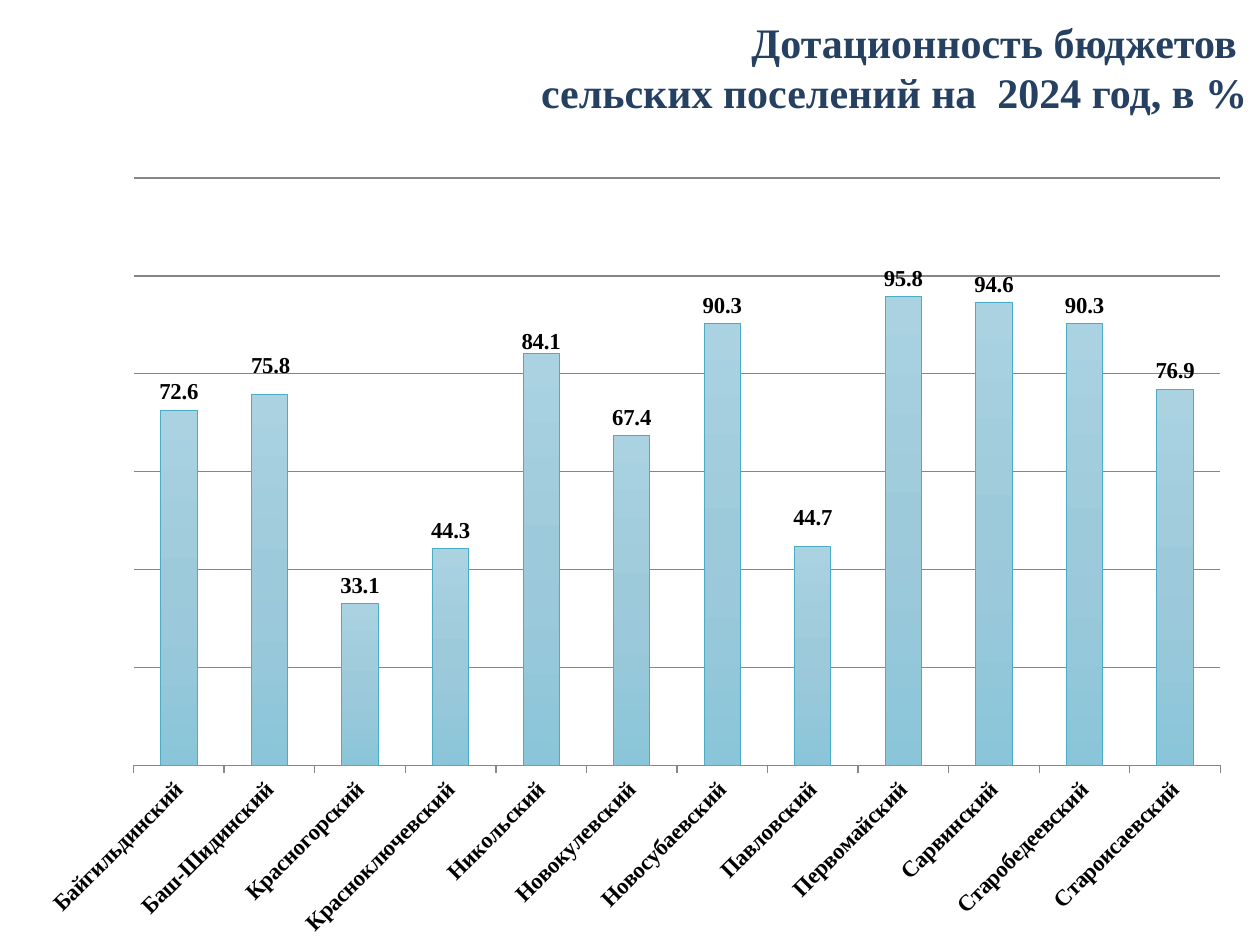
from copy import deepcopy
from dataclasses import dataclass

from pptx import Presentation
from pptx.chart.data import CategoryChartData
from pptx.dml.color import RGBColor
from pptx.enum.chart import XL_CHART_TYPE, XL_LABEL_POSITION, XL_TICK_MARK
from pptx.enum.text import MSO_ANCHOR, MSO_AUTO_SIZE, PP_ALIGN
from pptx.oxml import parse_xml
from pptx.oxml.ns import nsdecls
from pptx.util import Cm, Pt


@dataclass(frozen=True)
class Theme:
    """Colours, font and type sizes of the slide."""
    font: str = "Times New Roman"
    title: str = "254061"
    text: str = "000000"
    outline: str = "4BACC6"
    grid: str = "868686"
    bar: tuple = ((0, "AAD2E1"), (0.5, "9DCADB"), (1, "8BC5D9"))
    title_size: int = 24
    label_size: int = 13


THEME = Theme()
TITLE = ("Дотационность бюджетов ", "сельских поселений на  2024 год, в %")
SUBSIDY = {
    "Байгильдинский": 72.6, "Баш-Шидинский": 75.8, "Красногорский": 33.1,
    "Красноключевский": 44.3, "Никольский": 84.1, "Новокулевский": 67.4,
    "Новосубаевский": 90.3, "Павловский": 44.7, "Первомайский": 95.8,
    "Сарвинский": 94.6, "Старобедеевский": 90.3, "Староисаевский": 76.9,
}
LABEL_SHIFTS = {1: (0.001, -0.014), 4: (0, 0.008), 7: (0, -0.014)}
PLOT_BOX = {"x": 0.088, "y": 0.024, "w": 0.908, "h": 0.747}


def set_font(font, size, color):
    """Apply the bold theme font in one size and colour."""
    font.name, font.size, font.bold = THEME.font, Pt(size), True
    font.color.rgb = RGBColor.from_string(color)


def make_layout(values, modes=""):
    """Return a manual chart layout element."""
    items = "".join(f'<c:{k} val="{v}"/>' for k, v in values.items())
    return parse_xml(f'<c:layout {nsdecls("c")}><c:manualLayout>{modes}{items}'
                     '</c:manualLayout></c:layout>')


def add_title(s):
    """Place the right-aligned title in its placeholder."""
    sp = s.shapes.title
    sp.left, sp.top, sp.width, sp.height = Cm(1.4), Cm(0.2), Cm(24), Cm(2.31)
    tf = sp.text_frame
    tf.text = "\n".join(TITLE)
    tf.word_wrap, tf.vertical_anchor = True, MSO_ANCHOR.TOP
    tf.auto_size = MSO_AUTO_SIZE.SHAPE_TO_FIT_TEXT
    for p in tf.paragraphs:
        p.alignment = PP_ALIGN.RIGHT
        set_font(p.font, THEME.title_size, THEME.title)


def format_axes(chart):
    """Slant the category names and keep only gridlines of the value axis."""
    cat, val = chart.category_axis, chart.value_axis
    set_font(cat.tick_labels.font, THEME.label_size, THEME.text)
    cat._element.xpath("c:txPr/a:bodyPr")[0].set("rot", "-2700000")
    cat.major_tick_mark = XL_TICK_MARK.OUTSIDE
    val.minimum_scale, val.maximum_scale, val.major_unit = 0, 120, 20
    val.has_major_gridlines, val.visible = True, False
    val.tick_labels.number_format = "0.0"
    val.tick_labels.number_format_is_linked = False
    for line in (cat.format.line, val.major_gridlines.format.line):
        line.color.rgb = RGBColor.from_string(THEME.grid)
        line.width = Pt(0.75)


def format_bars(series):
    """Give the bars their vertical gradient and thin outline."""
    series.invert_if_negative = False
    fill, line = series.format.fill, series.format.line
    fill.gradient()
    fill.gradient_angle = 270
    stops = series._element.xpath(".//a:gsLst")[0]
    stops.insert(1, deepcopy(stops[0]))
    for stop, (position, color) in zip(fill.gradient_stops, THEME.bar):
        stop.position = position
        stop.color.rgb = RGBColor.from_string(color)
    line.color.rgb = RGBColor.from_string(THEME.outline)
    line.width = Pt(0.5)


def format_labels(series):
    """Show values above the bars, with a few labels shifted."""
    labels = series.data_labels
    labels.show_value = True
    labels.number_format, labels.number_format_is_linked = "General", False
    labels.position = XL_LABEL_POSITION.OUTSIDE_END
    set_font(labels.font, THEME.label_size, THEME.text)
    for i, (x, y) in LABEL_SHIFTS.items():
        label = series.points[i].data_label
        label.position = XL_LABEL_POSITION.OUTSIDE_END
        set_font(label.font, THEME.label_size, THEME.text)
        element = series._element.xpath(f"c:dLbls/c:dLbl[c:idx/@val={i}]")[0]
        element.insert(1, make_layout({"x": x, "y": y}))
    for leader in series._element.xpath("c:dLbls/c:showLeaderLines"):
        leader.set("val", "0")


def add_subsidy_chart(s):
    """Add the column chart of subsidy shares by settlement."""
    data = CategoryChartData(number_format="General")
    data.categories = list(SUBSIDY)
    data.add_series("Series 1", list(SUBSIDY.values()))
    chart = s.shapes.add_chart(XL_CHART_TYPE.COLUMN_CLUSTERED, Cm(0.57), Cm(3.21),
                               Cm(24.13), Cm(15.85), data).chart
    chart.has_legend = chart.has_title = False
    chart.font.name, chart.font.size = "Calibri", Pt(18)
    plot = chart.plots[0]
    plot.gap_width, plot.vary_by_categories = 150, False
    format_axes(chart)
    format_bars(plot.series[0])
    format_labels(plot.series[0])
    area = chart._chartSpace.xpath(".//c:plotArea")[0]
    for old in area.xpath("c:layout"):
        area.remove(old)
    modes = ('<c:layoutTarget val="inner"/><c:xMode val="edge"/>'
             '<c:yMode val="edge"/>')
    area.insert(0, make_layout(PLOT_BOX, modes))


def main():
    """Build and save the slide."""
    prs = Presentation()
    prs.slide_width, prs.slide_height = Cm(25.4), Cm(19.05)
    s = prs.slides.add_slide(prs.slide_layouts[5])
    add_subsidy_chart(s)
    add_title(s)
    prs.save("out.pptx")


if __name__ == "__main__":
    main()
